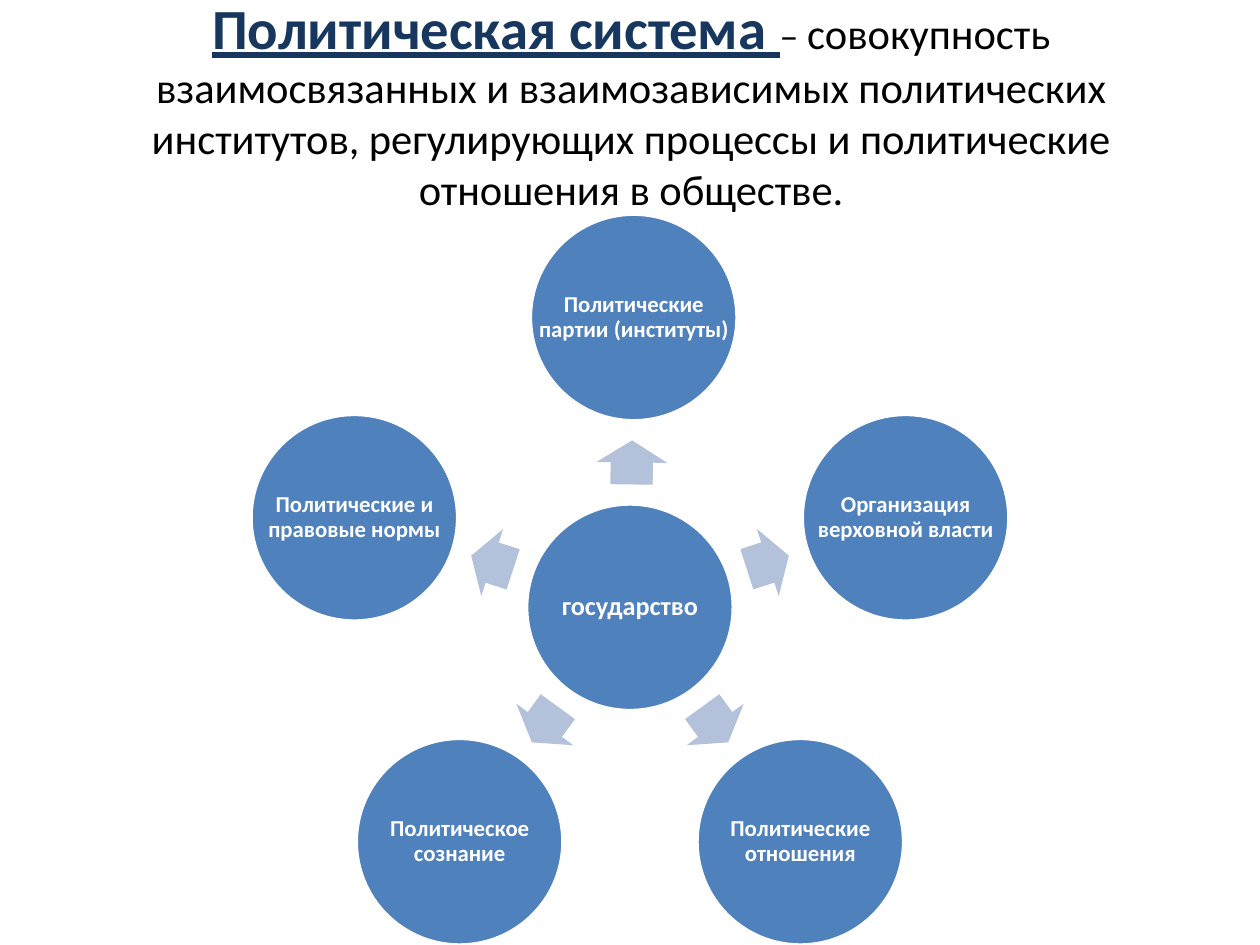
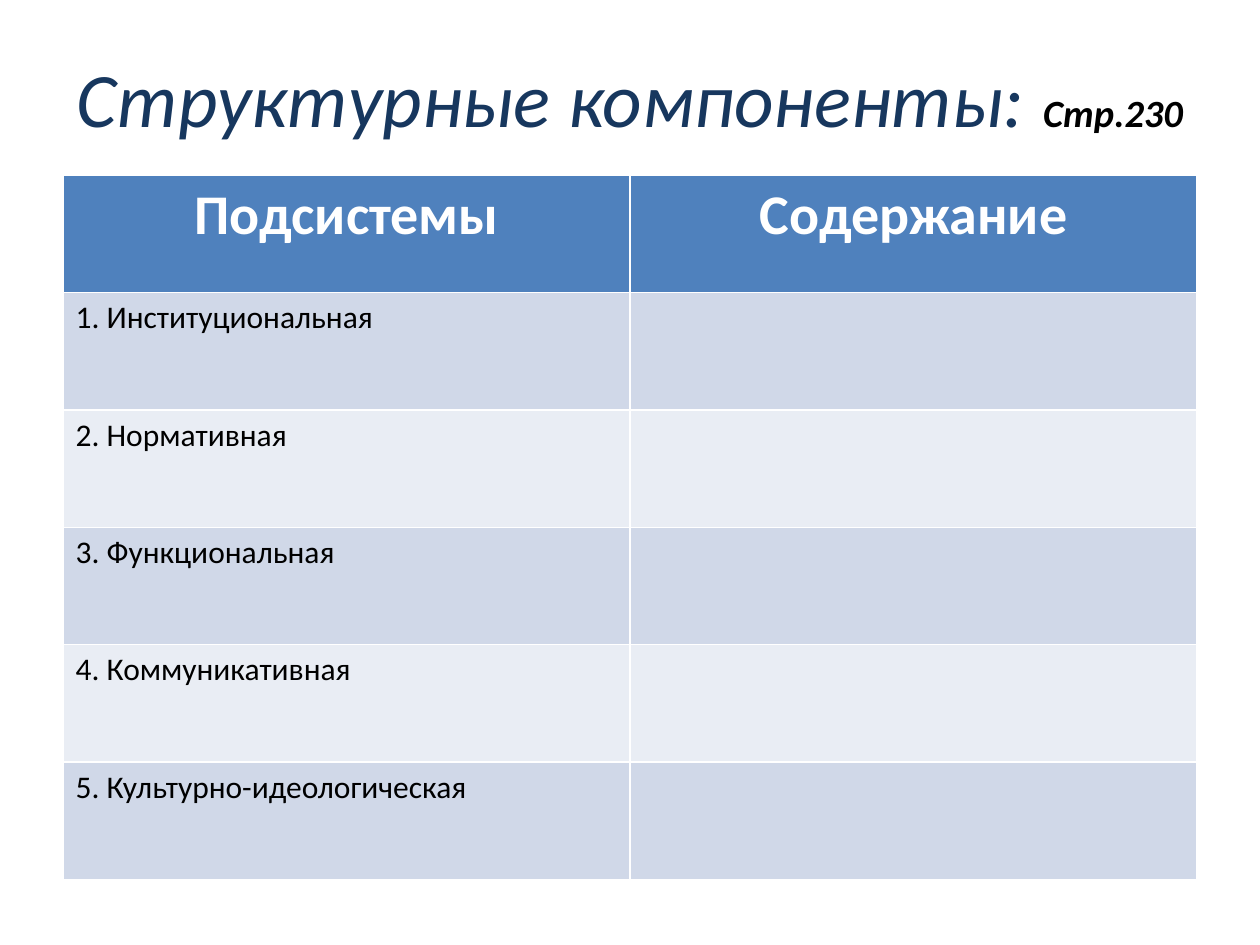
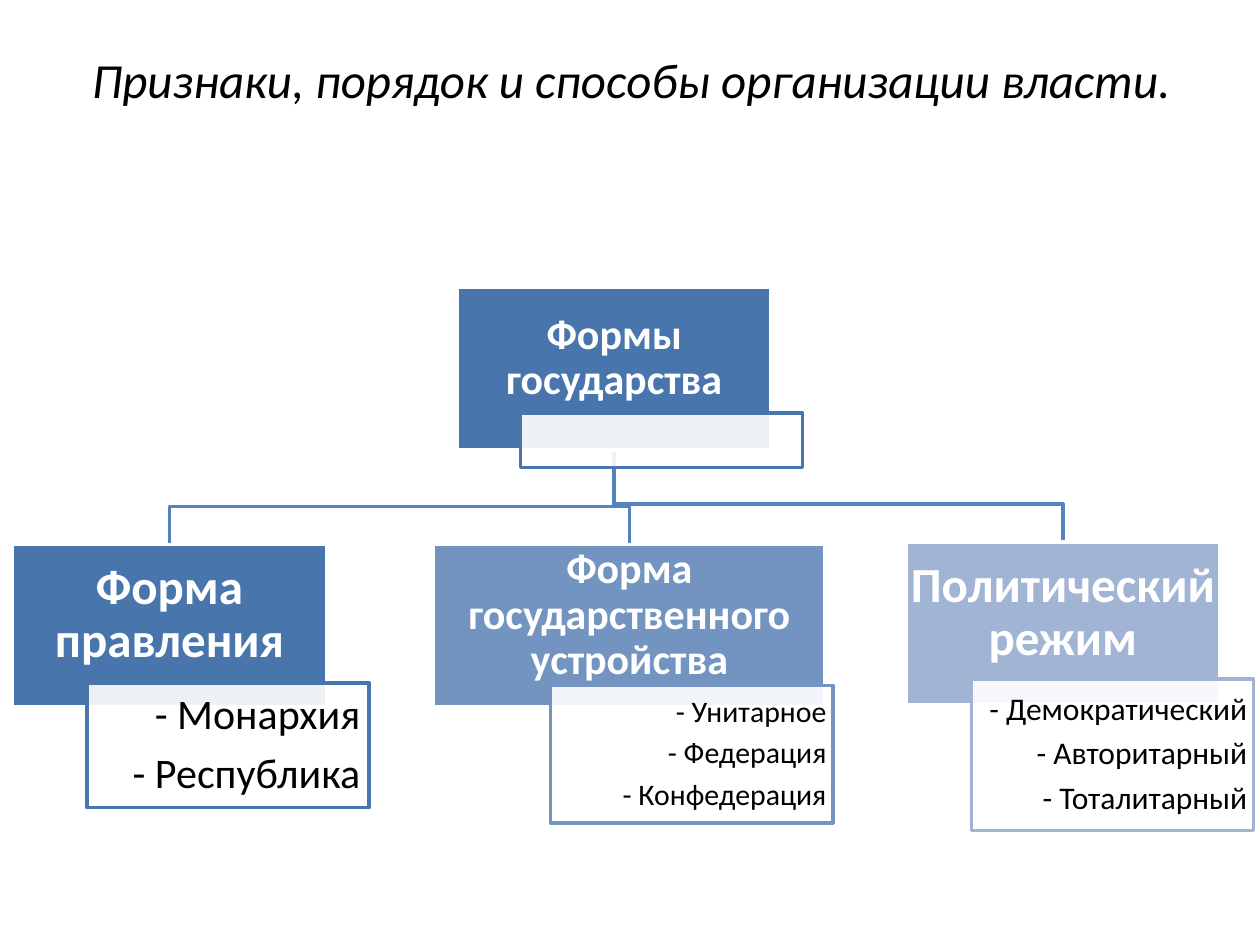
"""Build three slides on the political system and the forms of the state."""
import math
from dataclasses import dataclass

from lxml import etree
from pptx import Presentation
from pptx import util as u
from pptx.dml.color import RGBColor
from pptx.enum import shapes, text
from pptx.oxml import ns

FONT = "Calibri"
WHITE, BLACK, NAVY, BLUE = "FFFFFF", "000000", "17375E", "4F81BD"
PALE_ARROW, LINK = "B3C1DB", "5483BE"
BANDS = ("D0D8E8", "E9EDF4")
STEEL, MID_BLUE, SOFT_BLUE = "4875AC", "7393C1", "A2B4D4"
CENTER, RIGHT = text.PP_ALIGN.CENTER, text.PP_ALIGN.RIGHT
SHAPE = shapes.MSO_SHAPE


@dataclass(frozen=True)
class Box:
    """A rectangle in inches."""
    left: float
    top: float
    width: float
    height: float

    def lengths(self) -> list:
        """Return the four sides as lengths."""
        return [u.Inches(side) for side in (self.left, self.top, self.width, self.height)]


@dataclass(frozen=True)
class Style:
    """The look of a piece of text."""
    size: float
    color: str = BLACK
    bold: bool = False
    italic: bool = False
    underline: bool = False


@dataclass(frozen=True)
class Satellite:
    """A circle around the hub, at an angle in degrees."""
    label: str
    angle: float
    shift: float = 0


@dataclass(frozen=True)
class Form:
    """A heading block with its framed list of kinds."""
    heading: str
    box: Box
    size: float
    color: str
    frame: Box
    kinds: tuple = ()
    kind_size: float = 18
    margins: tuple = (0.05, 0.01)


SATELLITES = (
    Satellite("Политические\vпартии (институты)", -90, 0.03),
    Satellite("Организация\vверховной власти", -18),
    Satellite("Политические\vотношения", 54),
    Satellite("Политическое\vсознание", 126),
    Satellite("Политические и\vправовые нормы", 198),
)
SUBSYSTEMS = ("Институциональная", "Нормативная", "Функциональная",
              "Коммуникативная", "Культурно-идеологическая")
FORMS = (
    Form("Формы государства", Box(3.63, 2.28, 2.49, 1.29), 24, STEEL,
         Box(4.13, 3.28, 2.24, 0.43)),
    Form("Форма правления", Box(0.1, 4.32, 2.49, 1.29), 28, STEEL,
         Box(0.69, 5.42, 2.24, 0.99), ("Монархия", "Республика"), 24, (0.07, 0.02)),
    Form("Форма государственного устройства", Box(3.44, 4.32, 3.11, 1.29), 24, MID_BLUE,
         Box(4.37, 5.44, 2.24, 1.09), ("Унитарное", "Федерация", "Конфедерация"), 17),
    Form("Политический режим", Box(7.19, 4.3, 2.49, 1.29), 28, SOFT_BLUE,
         Box(7.71, 5.39, 2.24, 1.2), ("Демократический", "Авторитарный", "Тоталитарный"), 18),
)


def rgb(color: str) -> RGBColor:
    """Turn a hex string into a colour."""
    return RGBColor.from_string(color)


def set_font(font, style: Style) -> None:
    """Apply a style to a font."""
    font.name, font.size = FONT, u.Pt(style.size)
    font.bold, font.italic, font.underline = style.bold, style.italic, style.underline
    font.color.rgb = rgb(style.color)


def add_title(slide, box: Box, *pieces: tuple[str, Style]) -> None:
    """Add a centred title made of styled pieces."""
    frame = slide.shapes.add_textbox(*box.lengths()).text_frame
    frame.word_wrap = True
    frame.auto_size = text.MSO_AUTO_SIZE.NONE
    frame.vertical_anchor = text.MSO_ANCHOR.MIDDLE
    paragraph = frame.paragraphs[0]
    paragraph.alignment = CENTER
    if len(pieces) == 1:
        paragraph.text = pieces[0][0]
        set_font(paragraph.font, pieces[0][1])
        return
    for wording, style in pieces:
        run = paragraph.add_run()
        run.text = wording
        set_font(run.font, style)


def add_block(slide, kind, box: Box, fill: str, line: str | None = WHITE):
    """Add a filled shape, outlined when a line colour is given."""
    shape = slide.shapes.add_shape(kind, *box.lengths())
    shape.shadow.inherit = False
    shape.fill.solid()
    shape.fill.fore_color.rgb = rgb(fill)
    if line:
        shape.line.color.rgb = rgb(line)
        shape.line.width = u.Pt(2)
    else:
        shape.line.fill.background()
    return shape


def write(shape, lines: tuple, style: Style, margins: tuple,
          alignment=CENTER, wrap: bool = True) -> None:
    """Write lines into a shape, with margins left, top, right and bottom."""
    frame = shape.text_frame
    frame.word_wrap = wrap
    frame.vertical_anchor = text.MSO_ANCHOR.MIDDLE
    (frame.margin_left, frame.margin_top,
     frame.margin_right, frame.margin_bottom) = map(u.Inches, margins)
    for index, line in enumerate(lines):
        paragraph = frame.add_paragraph() if index else frame.paragraphs[0]
        paragraph.text = line
        paragraph.alignment = alignment
        paragraph.line_spacing = 0.9
        paragraph.space_after = u.Pt(round(0.32 * style.size, 1))
        set_font(paragraph.font, style)


def add_circle(slide, x: float, y: float, label: str, size: float) -> None:
    """Add a labelled circle centred on a point."""
    diameter = 1.64
    box = Box(x - diameter / 2, y - diameter / 2, diameter, diameter)
    circle = add_block(slide, SHAPE.OVAL, box, BLUE)
    write(circle, (label,), Style(size, WHITE, bold=True), (0.02,) * 4, wrap=False)


def add_arrow(slide, x: float, y: float, rotation: float) -> None:
    """Add a block arrow centred on a point."""
    width, height = 0.35, 0.56
    box = Box(x - width / 2, y - height / 2, width, height)
    arrow = add_block(slide, SHAPE.RIGHT_ARROW, box, PALE_ARROW, None)
    arrow.adjustments[0], arrow.adjustments[1] = 0.6, 0.5
    arrow.rotation = rotation


def build_system(slide) -> None:
    """Draw the hub and its satellites."""
    add_title(slide, Box(0.51, 0, 9, 1.64),
              ("Политическая система ", Style(32.4, NAVY, bold=True, underline=True)),
              ("– ", Style(21.6)),
              ("совокупность взаимосвязанных и взаимозависимых политических институтов, "
               "регулирующих процессы и политические отношения в обществе.", Style(24.3)))
    hub_x, hub_y, radius = 5, 4.82, 2.3
    add_circle(slide, hub_x, hub_y, "государство", 15)
    for satellite in SATELLITES:
        angle = math.radians(satellite.angle)
        dx = radius * math.cos(angle) + satellite.shift
        dy = radius * math.sin(angle)
        add_arrow(slide, hub_x + dx / 2, hub_y + dy / 2, math.degrees(math.atan2(dy, dx)) % 360)
        add_circle(slide, hub_x + dx, hub_y + dy, satellite.label, 13)


def fill_cell(cell, wording: str, fill: str, style: Style, alignment=None) -> None:
    """Fill a table cell and write its text."""
    cell.fill.solid()
    cell.fill.fore_color.rgb = rgb(fill)
    paragraph = cell.text_frame.paragraphs[0]
    paragraph.text = wording
    paragraph.alignment = alignment
    set_font(paragraph.font, style)


def build_components(slide) -> None:
    """Draw the table of subsystems."""
    add_title(slide, Box(0.5, 0.3, 9, 0.93),
              ("Структурные компоненты: ", Style(44, NAVY, italic=True)),
              ("Стр.230", Style(22, bold=True, italic=True)))
    box = Box(0.5, 1.39, 9, 5.59)
    table = slide.shapes.add_table(len(SUBSYSTEMS) + 1, 2, *box.lengths()).table
    for column, heading in enumerate(("Подсистемы", "Содержание")):
        fill_cell(table.cell(0, column), heading, BLUE, Style(32, WHITE, bold=True), CENTER)
    for row, subsystem in enumerate(SUBSYSTEMS, 1):
        for column, wording in enumerate((f"{row}. {subsystem}", "")):
            fill_cell(table.cell(row, column), wording, BANDS[(row - 1) % 2], Style(18))


def add_link(slide, parent: Box, child: Box) -> None:
    """Draw an elbow line from a parent block down to a child block."""
    start, end = parent.left + parent.width / 2, child.left + child.width / 2
    top, bend = parent.top + parent.height, child.top - 0.3
    points = [(u.Inches(x), u.Inches(y))
              for x, y in ((start, top), (start, bend), (end, bend), (end, child.top))]
    builder = slide.shapes.build_freeform(*points[0])
    builder.add_line_segments(points[1:], close=False)
    link = builder.convert_to_shape()
    link.shadow.inherit = False
    link.fill.background()
    link.line.color.rgb = rgb(LINK)
    link.line.width = u.Pt(2)


def add_form(slide, form: Form) -> None:
    """Draw a heading block and its translucent list frame."""
    block = add_block(slide, SHAPE.RECTANGLE, form.box, form.color)
    write(block, (form.heading,), Style(form.size, WHITE, bold=True), (0.02, 0.02, 0.02, 0.18))
    frame = add_block(slide, SHAPE.RECTANGLE, form.frame, WHITE, form.color)
    color = frame.element.find(f".//{ns.qn('a:solidFill')}/{ns.qn('a:srgbClr')}")
    etree.SubElement(color, ns.qn("a:alpha")).set("val", "90000")
    lines = tuple(f"- {kind}" for kind in form.kinds)
    write(frame, lines, Style(form.kind_size), form.margins * 2, RIGHT)


def build_forms(slide) -> None:
    """Draw the tree of forms of the state."""
    root, *children = FORMS
    for child in reversed(children):
        add_link(slide, root.box, child.box)
    for form in FORMS:
        add_form(slide, form)
    add_title(slide, Box(0.51, 0, 9, 1.25),
              ("Признаки, порядок и способы организации власти.", Style(28, italic=True)))


def main() -> None:
    """Build and save the presentation."""
    presentation = Presentation()
    presentation.slide_width, presentation.slide_height = u.Inches(10), u.Inches(7.5)
    for build in (build_system, build_components, build_forms):
        build(presentation.slides.add_slide(presentation.slide_layouts[6]))
    presentation.save("out.pptx")


if __name__ == "__main__":
    main()
